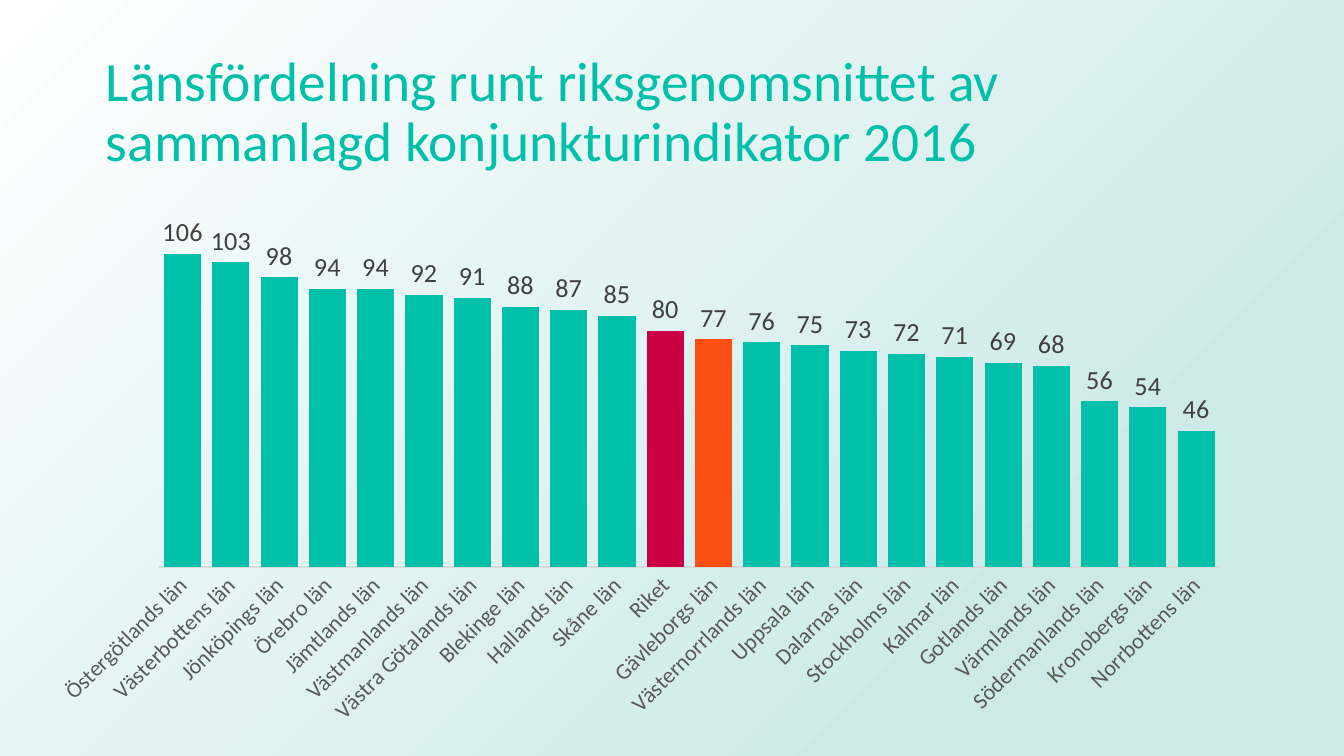
from lxml import etree
from pptx import Presentation
from pptx import util as u
from pptx.chart.data import CategoryChartData
from pptx.dml.color import RGBColor
from pptx.enum import chart as charts, shapes, text
from pptx.oxml import parse_xml
from pptx.oxml.ns import nsdecls, qn

COLORS = {
    "teal": "00C0A9", "crimson": "CB0044", "orange": "FB4F14",
    "mist": "CDEAE9", "white": "FFFFFF",
    "label": "404040", "axis_text": "595959", "axis_line": "D9D9D9",
}
FONT = "Calibri"
PAGE_WIDTH = 10
PAGE_HEIGHT = PAGE_WIDTH * 9 / 16
TITLE = "Länsfördelning runt riksgenomsnittet av sammanlagd konjunkturindikator 2016"
COUNTIES = [
    ("Östergötlands län", 106), ("Västerbottens län", 103), ("Jönköpings län", 98),
    ("Örebro län", 94), ("Jämtlands län", 94), ("Västmanlands län", 92),
    ("Västra Götalands län", 91), ("Blekinge län", 88), ("Hallands län", 87),
    ("Skåne län", 85), ("Riket", 80), ("Gävleborgs län", 77),
    ("Västernorrlands län", 76), ("Uppsala län", 75), ("Dalarnas län", 73),
    ("Stockholms län", 72), ("Kalmar län", 71), ("Gotlands län", 69),
    ("Värmlands län", 68), ("Södermanlands län", 56), ("Kronobergs län", 54),
    ("Norrbottens län", 46),
]
HIGHLIGHTS = {"Riket": "crimson", "Gävleborgs län": "orange"}
PLOT_INSET = (0.92, 0.08, 7.9, 2.64)


def rgb(name):
    return RGBColor.from_string(COLORS[name])


def inches(box):
    return [u.Inches(length) for length in box]


def style_font(font, size, color):
    font.name = FONT
    font.size = u.Pt(size)
    font.color.rgb = rgb(color)


def add_backdrop(page, box):
    backdrop = page.shapes.add_shape(shapes.MSO_SHAPE.RECTANGLE, *inches(box))
    backdrop.shadow.inherit = False
    backdrop.line.fill.background()
    backdrop.fill.gradient()
    for stop, position, color in zip(backdrop.fill.gradient_stops, (0.23, 1), ("mist", "white")):
        stop.position = position
        stop.color.rgb = rgb(color)
    gradient = backdrop._element.spPr.find(qn("a:gradFill"))
    radial = parse_xml(
        f'<a:path {nsdecls("a")} path="circle"><a:fillToRect l="100000" t="100000"/></a:path>')
    gradient.replace(gradient.find(qn("a:lin")), radial)


def add_title(page, box):
    frame = page.shapes.add_textbox(*inches(box)).text_frame
    frame.word_wrap = True
    frame.vertical_anchor = text.MSO_ANCHOR.MIDDLE
    para = frame.paragraphs[0]
    para.line_spacing = 0.9
    span = para.add_run()
    span.text = TITLE
    style_font(span.font, 29.7, "teal")


def place_plot(chart, width, height):
    plot_area = chart._chartSpace.chart.plotArea
    for old in plot_area.findall(qn("c:layout")):
        plot_area.remove(old)
    layout = etree.Element(qn("c:layout"))
    manual = etree.SubElement(layout, qn("c:manualLayout"))
    settings = {"layoutTarget": "inner", "xMode": "edge", "yMode": "edge"}
    for tag, length, whole in zip("xywh", PLOT_INSET, (width, height) * 2):
        settings[tag] = length / whole
    for tag, value in settings.items():
        etree.SubElement(manual, qn(f"c:{tag}")).set("val", str(value))
    plot_area.insert(0, layout)


def style_axes(chart):
    values = chart.value_axis
    values.minimum_scale = 0
    values.maximum_scale = 120
    values.has_major_gridlines = False
    values.visible = False
    values.tick_labels.number_format = "0"
    values.tick_labels.number_format_is_linked = False
    counties = chart.category_axis
    counties.has_major_gridlines = False
    counties.major_tick_mark = charts.XL_TICK_MARK.NONE
    counties.minor_tick_mark = charts.XL_TICK_MARK.NONE
    counties.format.line.color.rgb = rgb("axis_line")
    counties.format.line.width = u.Pt(0.75)
    style_font(counties.tick_labels.font, 12, "axis_text")
    counties._element.find(qn("c:txPr")).find(qn("a:bodyPr")).set("rot", "-2700000")


def style_bars(plot):
    plot.gap_width = 30
    plot.vary_by_categories = False
    series = plot.series[0]
    series.format.fill.solid()
    series.format.fill.fore_color.rgb = rgb("teal")
    for index, (county, _) in enumerate(COUNTIES):
        if county in HIGHLIGHTS:
            fill = series.points[index].format.fill
            fill.solid()
            fill.fore_color.rgb = rgb(HIGHLIGHTS[county])
    labels = series.data_labels
    labels.show_value = True
    labels.number_format = "0"
    labels.number_format_is_linked = False
    labels.position = charts.XL_LABEL_POSITION.OUTSIDE_END
    style_font(labels.font, 14, "label")


def add_county_chart(page, box):
    data = CategoryChartData(number_format="0")
    data.categories = [county for county, _ in COUNTIES]
    data.add_series("Series 1", [value for _, value in COUNTIES])
    chart = page.shapes.add_chart(
        charts.XL_CHART_TYPE.COLUMN_CLUSTERED, *inches(box), data).chart
    chart.has_legend = False
    chart.has_title = False
    chart.font.name = FONT
    chart.font.size = u.Pt(10)
    place_plot(chart, *box[2:])
    style_axes(chart)
    style_bars(chart.plots[0])


def main():
    deck = Presentation()
    deck.slide_width, deck.slide_height = inches((PAGE_WIDTH, PAGE_HEIGHT))
    page = deck.slides.add_slide(deck.slide_layouts[6])
    add_backdrop(page, (0, 0, PAGE_WIDTH, PAGE_HEIGHT))
    add_title(page, (0.69, 0.3, 8.62, 1.09))
    add_county_chart(page, (0.26, 1.5, 8.99, 3.97))
    deck.save("out.pptx")


if __name__ == "__main__":
    main()
